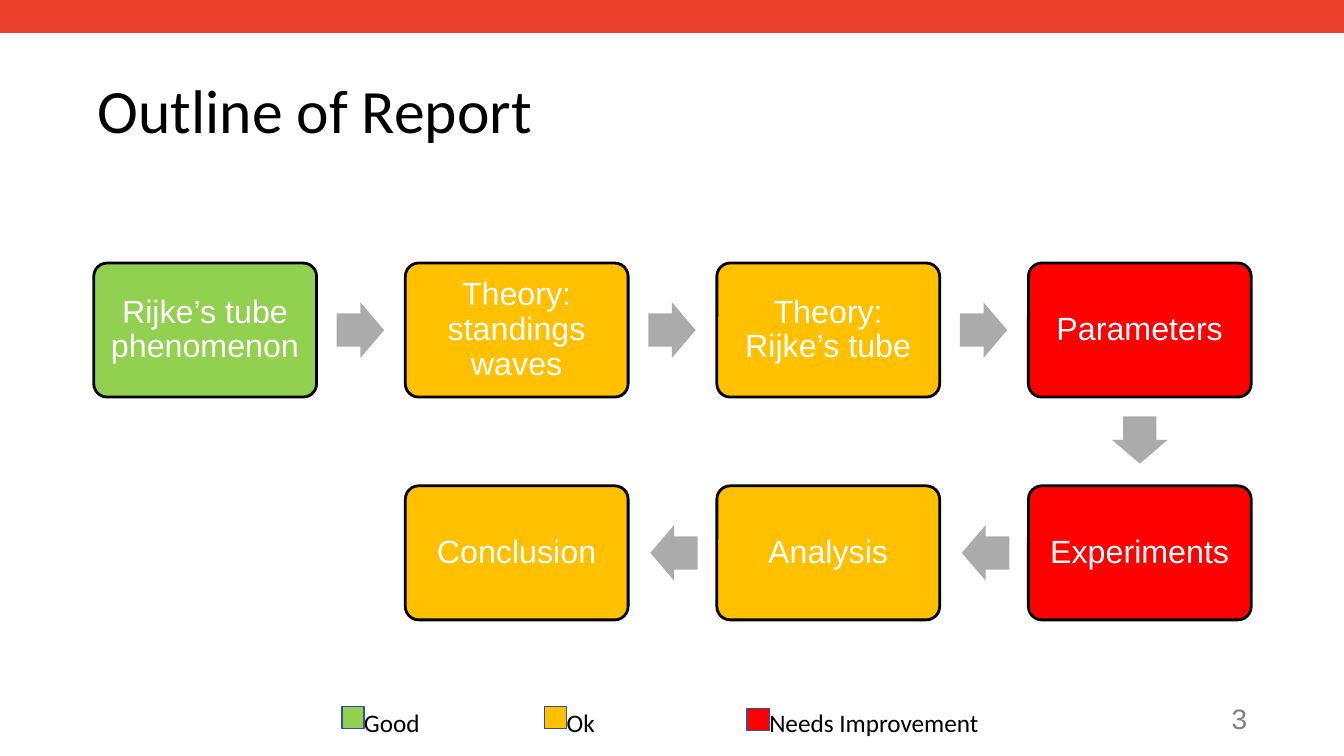
from lxml import etree
from pptx import Presentation
from pptx.dml.color import RGBColor
from pptx.enum.shapes import MSO_CONNECTOR, MSO_SHAPE
from pptx.enum.text import MSO_ANCHOR, PP_ALIGN
from pptx.oxml.ns import qn
from pptx.util import Inches, Pt

RECT, ROUND, ARROW = MSO_SHAPE.RECTANGLE, MSO_SHAPE.ROUNDED_RECTANGLE, MSO_SHAPE.RIGHT_ARROW
STRAIGHT = MSO_CONNECTOR.STRAIGHT
MIDDLE = MSO_ANCHOR.MIDDLE
LEFT, CENTER, RIGHT = PP_ALIGN.LEFT, PP_ALIGN.CENTER, PP_ALIGN.RIGHT

COLORS = {
    "banner": "EA402C", "good": "92D050", "ok": "FFC000", "poor": "FF0000",
    "arrow": "ABABAB", "edge": "32538F", "black": "000000",
    "white": "FFFFFF", "gray": "808080",
}
COL_X, COL_STEP = 0.93, 3.09
ROW_Y, ROW_STEP = 2.61, 2.21
BOX_W, BOX_H = 2.21, 1.33
ARROW_W, ARROW_H = 0.47, 0.55

STEPS = [
    ("Rijke’s tube phenomenon", "good", 0, 0, 0),
    ("Theory: standings waves", "ok", 1, 0, 0),
    ("Theory: Rijke’s tube", "ok", 2, 0, 0),
    ("Parameters", "poor", 3, 0, 90),
    ("Experiments", "poor", 3, 1, 180),
    ("Analysis", "ok", 2, 1, 180),
    ("Conclusion", "ok", 1, 1, None),
]
ARROW_OFFSETS = {0: (2.41, 0.39), 90: (0.87, 1.48), 180: (-0.66, 0.39)}
LEGEND = [
    ("Good", "good", 3.39, 7.01, 0.7),
    ("Ok", "ok", 5.4, 7.01, 0.5),
    ("Needs Improvement", "poor", 7.41, 7.03, 2.3),
]


class SlideBuilder:
    """Draw styled elements on one slide."""

    def __init__(self, slide):
        self.slide = slide

    def color(self, name):
        return RGBColor.from_string(COLORS[name])

    def banner(self, y, width, weight):
        c = self.slide.shapes.add_connector(
            STRAIGHT, Inches(0), Inches(y), Inches(width), Inches(y))
        c.line.color.rgb = self.color("banner")
        c.line.width = Pt(weight)
        etree.SubElement(c._element.spPr, qn("a:effectLst"))

    def shape(self, kind, x, y, w, h, fill, line=None, weight=1):
        s = self.slide.shapes.add_shape(kind, Inches(x), Inches(y), Inches(w), Inches(h))
        s.shadow.inherit = False
        s.fill.solid()
        s.fill.fore_color.rgb = self.color(fill)
        if line:
            s.line.color.rgb = self.color(line)
            s.line.width = Pt(weight)
        else:
            s.line.fill.background()
        return s

    def set_text(self, s, text, size, font, color, align, inset, spacing=1.0):
        tf = s.text_frame
        tf.word_wrap = True
        tf.vertical_anchor = MIDDLE
        tf.margin_left = tf.margin_right = Inches(inset)
        tf.margin_top = tf.margin_bottom = Inches(inset)
        p = tf.paragraphs[0]
        p.text = text
        p.alignment = align
        p.line_spacing = spacing
        p.font.size = Pt(size)
        p.font.name = font
        p.font.color.rgb = self.color(color)

    def text(self, text, x, y, w, h, size, font="Calibri", color="black",
             align=LEFT, inset=0.05, spacing=1.0):
        s = self.slide.shapes.add_textbox(Inches(x), Inches(y), Inches(w), Inches(h))
        self.set_text(s, text, size, font, color, align, inset, spacing)

    def step(self, text, fill, x, y):
        s = self.shape(ROUND, x, y, BOX_W, BOX_H, fill, "black", 2)
        s.adjustments[0] = 0.1
        self.set_text(s, text, 23, "Arial", "white", CENTER, 0.13, 0.9)

    def arrow(self, x, y, angle):
        s = self.shape(ARROW, x, y, ARROW_W, ARROW_H, "arrow")
        s.adjustments[0] = 0.6
        s.adjustments[1] = 0.5
        s.rotation = angle

    def legend(self, label, fill, x, y, width):
        self.text(label, x + 0.22, 6.96, width, 0.42, 18, inset=0)
        self.shape(RECT, x, y, 0.22, 0.22, fill, "edge")


def main():
    prs = Presentation()
    prs.slide_width, prs.slide_height = Inches(13.33), Inches(7.5)
    b = SlideBuilder(prs.slides.add_slide(prs.slide_layouts[6]))
    b.banner(0.16, 13.33, 24)
    b.text("Outline of Report", 0.92, 0.4, 10.82, 1.45, 44, spacing=0.9)
    for text, fill, col, row, angle in STEPS:
        x, y = COL_X + col * COL_STEP, ROW_Y + row * ROW_STEP
        b.step(text, fill, x, y)
        if angle is not None:
            dx, dy = ARROW_OFFSETS[angle]
            b.arrow(x + dx, y + dy, angle)
    for item in LEGEND:
        b.legend(*item)
    b.text("3", 12.12, 6.92, 0.3, 0.42, 20, "Arial", "gray", RIGHT)
    prs.save("out.pptx")


if __name__ == "__main__":
    main()
